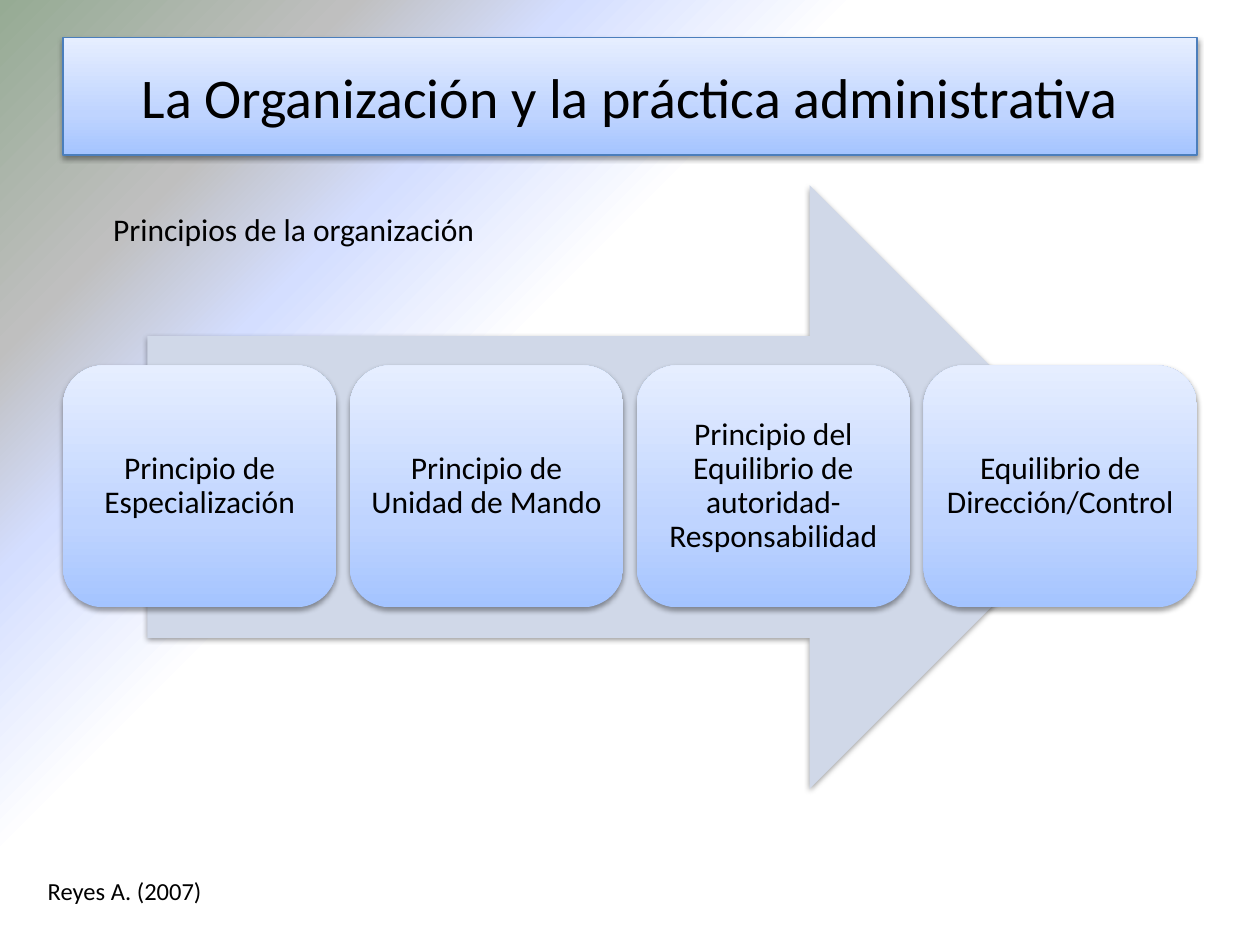
from dataclasses import dataclass

from lxml import etree
from pptx import Presentation
from pptx import util as u
from pptx.dml.color import RGBColor
from pptx.enum import shapes, text
from pptx.oxml import parse_xml
from pptx.oxml.ns import nsdecls, qn


@dataclass(frozen=True)
class Theme:
    font: str = "Calibri"
    ink: str = "000000"
    arrow: str = "D0D8E8"
    border: str = "4B7EBC"
    title_size: int = 32
    body_size: int = 18
    source_size: int = 14
    # Gradient stops: position in percent, colour, opacity in percent
    panel: tuple = ((0, "A4C4FF", 100), (35, "BFD4FF", 100), (100, "E6EEFF", 100))
    backdrop: tuple = ((61, "FFFFFF", 100), (74, "D4DEFF", 100),
                       (84, "BFBFBF", 43), (100, "96AB94", 100))


UPWARD = '<a:lin ang="16200000" scaled="0"/>'
FROM_BOTTOM_RIGHT = '<a:path path="circle"><a:fillToRect l="100000" t="100000"/></a:path>'


def set_all(target, values):
    for name, value in values.items():
        setattr(target, name, value)


class SlideBuilder:
    def __init__(self, slide, theme):
        self.slide = slide
        self.theme = theme

    def gradient(self, fill, owner, stops, direction):
        """Give fill the stops; owner is the element that contains the fill."""
        fill.gradient()
        listed = "".join(
            f'<a:gs pos="{position * 1000}"><a:srgbClr val="{colour}">'
            + (f'<a:alpha val="{opacity * 1000}"/>' if opacity < 100 else "")
            + "</a:srgbClr></a:gs>"
            for position, colour, opacity in stops)
        old = next(owner.iter(qn("a:gradFill")))
        old.getparent().replace(old, parse_xml(
            f'<a:gradFill {nsdecls("a")} rotWithShape="1">'
            f"<a:gsLst>{listed}</a:gsLst>{direction}</a:gradFill>"))

    def background(self):
        self.gradient(self.slide.background.fill, self.slide.element,
                      self.theme.backdrop, FROM_BOTTOM_RIGHT)

    def shadow(self, shape):
        shape.shadow.inherit = False
        effects = next(shape.element.iter(qn("a:effectLst")))
        drop = etree.SubElement(effects, qn("a:outerShdw"), blurRad=str(u.Pt(3.1)),
                                dist=str(u.Pt(1.6)), dir="5400000", rotWithShape="0")
        colour = etree.SubElement(drop, qn("a:srgbClr"), val=self.theme.ink)
        etree.SubElement(colour, qn("a:alpha"), val="38000")

    def add_words(self, shape, words, size, paragraph=None, **frame_format):
        frame = shape.text_frame
        set_all(frame, {"word_wrap": True, **frame_format})
        para = frame.paragraphs[0]
        set_all(para, paragraph or {})
        span = para.add_run()
        span.text = words
        set_all(span.font, {"name": self.theme.font, "size": u.Pt(size)})
        span.font.color.rgb = RGBColor.from_string(self.theme.ink)

    def title(self, words, left, top, width, height):
        box = self.slide.shapes.title
        set_all(box, {"left": left, "top": top, "width": width, "height": height})
        self.gradient(box.fill, box.element, self.theme.panel, UPWARD)
        box.line.color.rgb = RGBColor.from_string(self.theme.border)
        box.line.width = u.Pt(0.75)
        self.shadow(box)
        self.add_words(box, words, self.theme.title_size,
                       {"alignment": text.PP_ALIGN.CENTER},
                       vertical_anchor=text.MSO_ANCHOR.MIDDLE,
                       auto_size=text.MSO_AUTO_SIZE.NONE)

    def shape(self, kind, *place):
        shape = self.slide.shapes.add_shape(kind, *place)
        shape.line.fill.background()
        self.shadow(shape)
        return shape

    def arrow(self, *place):
        arrow = self.shape(shapes.MSO_SHAPE.RIGHT_ARROW, *place)
        arrow.fill.solid()
        arrow.fill.fore_color.rgb = RGBColor.from_string(self.theme.arrow)

    def card(self, words, *place):
        card = self.shape(shapes.MSO_SHAPE.ROUNDED_RECTANGLE, *place)
        self.gradient(card.fill, card.element, self.theme.panel, UPWARD)
        margins = dict.fromkeys(
            ("margin_left", "margin_top", "margin_right", "margin_bottom"), u.Inches(0.07))
        self.add_words(card, words, self.theme.body_size,
                       {"alignment": text.PP_ALIGN.CENTER, "line_spacing": 0.9},
                       vertical_anchor=text.MSO_ANCHOR.MIDDLE, **margins)

    def label(self, words, size, *place):
        box = self.slide.shapes.add_textbox(*place)
        self.add_words(box, words, size, auto_size=text.MSO_AUTO_SIZE.SHAPE_TO_FIT_TEXT)


def main():
    deck = Presentation()
    set_all(deck, {"slide_width": u.Inches(10), "slide_height": u.Inches(7.5)})
    theme = Theme()
    page = SlideBuilder(deck.slides.add_slide(deck.slide_layouts[5]), theme)
    inch = u.Inches

    page.background()
    page.title("La Organización y la práctica administrativa",
               inch(0.5), inch(0.3), inch(9), inch(0.93))
    page.arrow(inch(1.17), inch(1.47), inch(7.65), inch(4.79))

    principles = ("Principio de Especialización",
                  "Principio de Unidad de Mando",
                  "Principio del Equilibrio de autoridad-Responsabilidad",
                  "Equilibrio de Dirección/Control")
    card_width = 2.17
    pitch = (9 - card_width) / (len(principles) - 1)
    for column, principle in enumerate(principles):
        page.card(principle, inch(0.5 + column * pitch), inch(2.9),
                  inch(card_width), inch(1.92))

    page.label("Principios de la organización", theme.body_size,
               inch(0.8), inch(1.62), inch(3.88), inch(0.4))
    page.label("Reyes A. (2007)", theme.source_size,
               inch(0.28), inch(6.9), inch(3.88), inch(0.34))
    deck.save("out.pptx")


if __name__ == "__main__":
    main()
